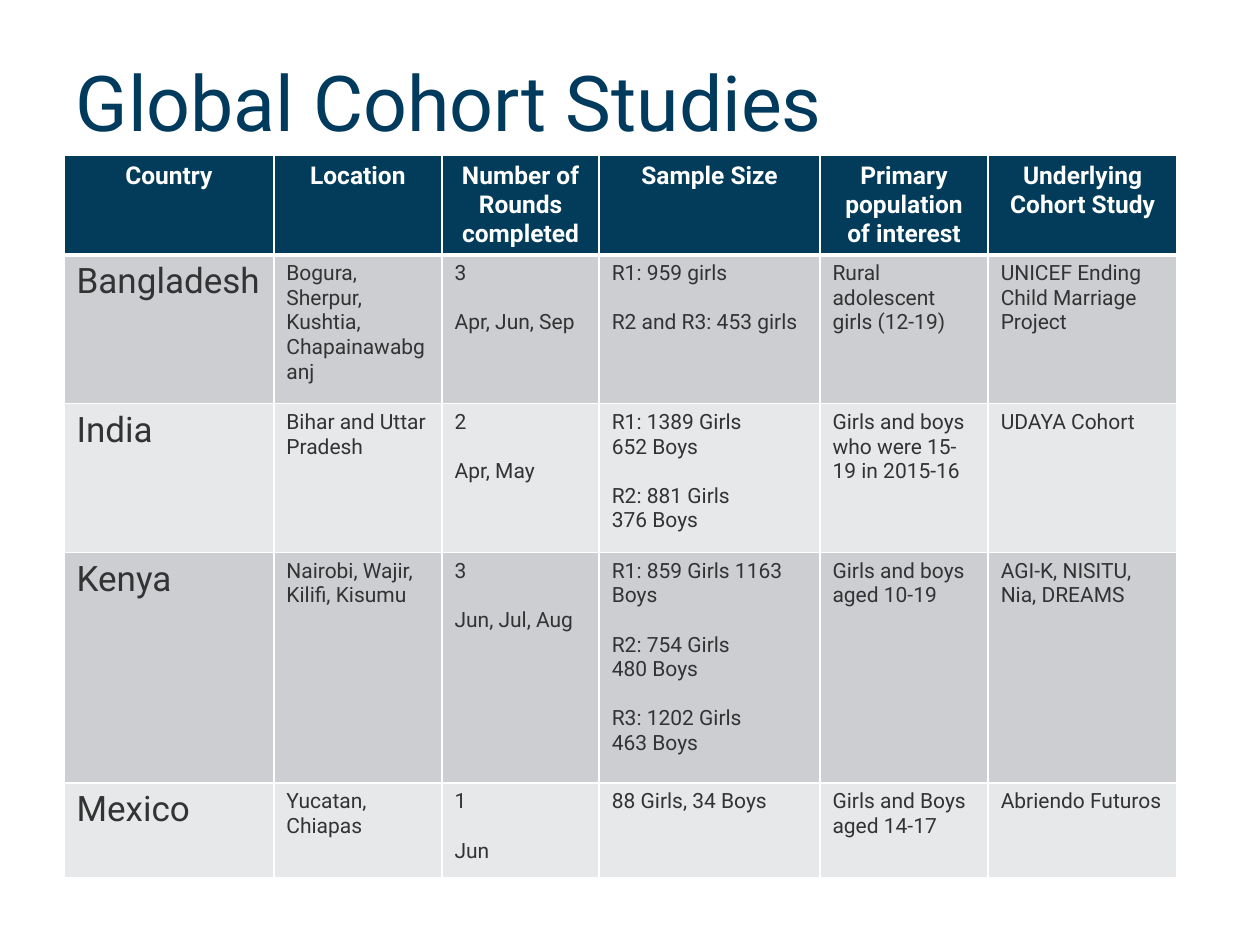
from dataclasses import astuple, dataclass

from lxml.etree import SubElement
from pptx import Presentation
from pptx.dml.color import RGBColor
from pptx.enum.text import MSO_ANCHOR as Anchor, PP_ALIGN as Align
from pptx.oxml.ns import qn
from pptx.util import Cm, Pt

FONT = "Roboto"
COLORS = {
    "title": "003A5D",
    "header": "033C5A",
    "white": "FFFFFF",
    "text": "333333",
    "odd": "CCCED2",
    "even": "E7E8EA",
}
COLUMN_WIDTHS = (4.23, 3.39, 3.17, 4.45, 3.39, 3.81)
HEADER_HEIGHT = 1.98
LINE_GAP = 14  # height of one skipped line of cell text, in points


@dataclass
class Cohort:
    country: str
    location: str
    rounds: str
    sample: str
    population: str
    study: str


# A line break starts a paragraph, a double one also leaves a gap
HEADER = Cohort("Country", "Location", "Number of Rounds completed", "Sample Size",
                "Primary population of interest", "Underlying Cohort Study")
COHORTS = (
    (3.0, Cohort("Bangladesh", "Bogura, Sherpur, Kushtia, Chapainawabganj",
                 "3\n\nApr, Jun, Sep", "R1: 959 girls\n\nR2 and R3: 453 girls",
                 "Rural adolescent girls (12-19)",
                 "UNICEF Ending Child Marriage Project")),
    (3.0, Cohort("India", "Bihar and Uttar Pradesh", "2\n\nApr, May",
                 "R1: 1389 Girls\n652 Boys\n\nR2: 881 Girls\n376 Boys",
                 "Girls and boys who were 15-19 in 2015-16", "UDAYA Cohort")),
    (4.65, Cohort("Kenya", "Nairobi, Wajir, Kilifi, Kisumu", "3\n\nJun, Jul, Aug",
                  "R1: 859 Girls 1163 Boys\n\nR2: 754 Girls\n480 Boys"
                  "\n\nR3: 1202 Girls\n463 Boys",
                  "Girls and boys aged 10-19", "AGI-K, NISITU, Nia, DREAMS")),
    (1.9, Cohort("Mexico", "Yucatan, Chiapas", "1\n\nJun", "88 Girls, 34 Boys",
                 "Girls and Boys aged 14-17", "Abriendo Futuros")),
)


def write(frame, text: str, *, size: float, color: str, bold: bool = False,
          align=Align.LEFT) -> None:
    """Fill a text frame, one paragraph per line."""
    para = None
    for block in text.split("\n\n"):
        for number, line in enumerate(block.split("\n")):
            starts_gap = para is not None and number == 0
            para = frame.paragraphs[0] if para is None else frame.add_paragraph()
            para.alignment = align
            if starts_gap:
                para.space_before = Pt(LINE_GAP)
            span = para.add_run()
            span.text = line
            span.font.name = FONT
            span.font.size = Pt(size)
            span.font.bold = bold
            span.font.color.rgb = RGBColor.from_string(COLORS[color])


def set_borders(cell, top: float = 1, bottom: float = 1) -> None:
    """Draw white cell borders; they must precede the fill."""
    properties = cell._tc.get_or_add_tcPr()
    for side, width in (("L", 1), ("R", 1), ("T", top), ("B", bottom)):
        line = SubElement(properties, qn(f"a:ln{side}"), w=str(Pt(width)))
        fill = SubElement(line, qn("a:solidFill"))
        SubElement(fill, qn("a:srgbClr"), val=COLORS["white"])


def paint(cell, color: str) -> None:
    cell.fill.solid()
    cell.fill.fore_color.rgb = RGBColor.from_string(COLORS[color])


def draw_header(table) -> None:
    table.rows[0].height = Cm(HEADER_HEIGHT)
    for cell, text in zip(table.rows[0].cells, astuple(HEADER)):
        set_borders(cell, bottom=3)
        paint(cell, "header")
        write(cell.text_frame, text, size=14, color="white", bold=True,
              align=Align.CENTER)


def draw_cohort(table, index: int, height: float, cohort: Cohort) -> None:
    row = table.rows[index]
    row.height = Cm(height)
    for column, (cell, text) in enumerate(zip(row.cells, astuple(cohort))):
        set_borders(cell, top=3 if index == 1 else 1)
        paint(cell, "odd" if index % 2 else "even")
        write(cell.text_frame, text, size=12 if column else 20, color="text")


def main() -> None:
    deck = Presentation()
    deck.slide_width, deck.slide_height = Cm(25.4), Cm(19.05)
    page = deck.slides.add_slide(deck.slide_layouts[5])

    # Title
    title = page.shapes.title
    title.left, title.top = Cm(1.27), Cm(0.43)
    title.width, title.height = Cm(22.86), Cm(3.18)
    title.text_frame.vertical_anchor = Anchor.MIDDLE
    write(title.text_frame, "Global Cohort Studies", size=44, color="title")

    # Table
    heights = HEADER_HEIGHT + sum(height for height, _ in COHORTS)
    table = page.shapes.add_table(
        len(COHORTS) + 1, len(COLUMN_WIDTHS), Cm(1.29), Cm(3.13),
        Cm(sum(COLUMN_WIDTHS)), Cm(heights)).table
    for column, width in zip(table.columns, COLUMN_WIDTHS):
        column.width = Cm(width)
    draw_header(table)
    for index, (height, cohort) in enumerate(COHORTS, start=1):
        draw_cohort(table, index, height, cohort)

    deck.save("out.pptx")


if __name__ == "__main__":
    main()
